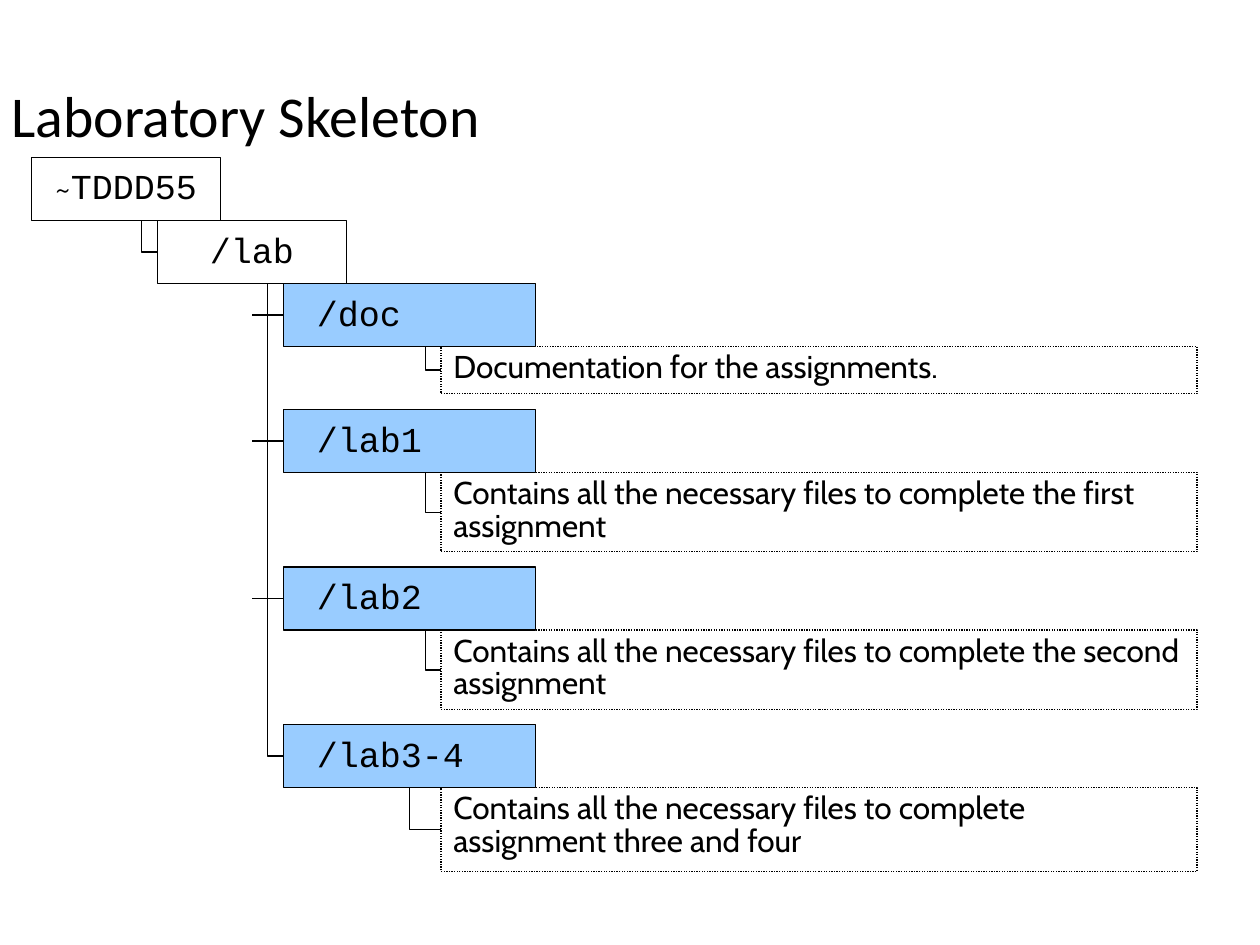
from lxml import etree
from pptx import Presentation
from pptx.dml.color import RGBColor
from pptx.enum.dml import MSO_LINE
from pptx.enum.shapes import MSO_CONNECTOR, MSO_SHAPE
from pptx.enum.text import MSO_ANCHOR, PP_ALIGN
from pptx.oxml.ns import qn
from pptx.util import Cm, Pt

RECTANGLE = MSO_SHAPE.RECTANGLE
ELBOW = MSO_CONNECTOR.ELBOW
DOTTED = MSO_LINE.ROUND_DOT
TOP, MIDDLE = MSO_ANCHOR.TOP, MSO_ANCHOR.MIDDLE
LEFT, CENTER = PP_ALIGN.LEFT, PP_ALIGN.CENTER
BLACK = RGBColor(0, 0, 0)
BLUE = RGBColor(0x99, 0xCC, 0xFF)
CODE, BODY, HEADING = "Courier New", "Cabin", "Calibri"

TITLE = "Laboratory Skeleton"
ROOTS = [
    (1, 5, [("~", BODY), ("TDDD55", CODE)], 0.86),
    (5, 7, [("/lab", CODE)], 0.9),
]
# top, name, description, description height, branch drop, elbow position
FOLDERS = [
    (9, " /doc", "Documentation for the assignments.", 1.5, 0.75, 0.5),
    (13, " /lab1", "Contains all the necessary files to complete the first assignment", 2.52, 1.27, 0.5),
    (18, " /lab2", "Contains all the necessary files to complete the second assignment", 2.52, 1.27, 0.5),
    (23, " /lab3-4", "Contains all the necessary files to complete assignment three and four", 2.67, 1.33, 0),
]
ROOT_WIDTH, FOLDER_WIDTH, NOTE_WIDTH, ROW = 6, 8, 24, 2
FOLDER_LEFT, NOTE_LEFT = 9, 14
LAST_TEXT_WIDTH = 23.32


def grid(quarter_inches):
    return Cm(2.54 * quarter_inches / 4)


def write(box, spans, size=18, spacing=0.86, align=LEFT, anchor=TOP, wrap=True):
    frame = box.text_frame
    frame.word_wrap = wrap
    frame.vertical_anchor = anchor
    para = frame.paragraphs[0]
    para.alignment = align
    para.line_spacing = spacing
    for text, font in spans:
        span = para.add_run()
        span.text = text
        span.font.name = font
        span.font.size = Pt(size)
        span.font.color.rgb = BLACK
    return frame


def add_box(page, left, top, width, height, fill=None, dash=None):
    box = page.shapes.add_shape(RECTANGLE, grid(left), grid(top), grid(width), grid(height))
    box.shadow.inherit = False
    if fill is None:
        box.fill.background()
    else:
        box.fill.solid()
        box.fill.fore_color.rgb = fill
    box.line.color.rgb = BLACK
    box.line.width = Pt(0.75)
    if dash is not None:
        box.line.dash_style = dash
    return box


def add_branch(page, start, end, bend=0.5):
    branch = page.shapes.add_connector(ELBOW, *(grid(value) for value in start + end))
    branch.line.color.rgb = BLACK
    branch.line.width = Pt(0.75)
    properties = branch._element.spPr
    etree.SubElement(properties, qn("a:effectLst"))
    guides = properties.find(qn("a:prstGeom")).find(qn("a:avLst"))
    etree.SubElement(guides, qn("a:gd"), name="adj1", fmla=f"val {int(bend * 100000)}")


def main():
    deck = Presentation()
    deck.slide_width, deck.slide_height = grid(40), grid(30)
    page = deck.slides.add_slide(deck.slide_layouts[6])

    heading = page.shapes.add_textbox(Cm(0.23), Cm(1.55), Cm(23.5), Cm(1.65))
    frame = write(heading, [(TITLE, HEADING)], size=33, spacing=0.96, anchor=MIDDLE)
    frame.margin_left = frame.margin_right = frame.margin_top = frame.margin_bottom = 0

    for left, top, spans, spacing in ROOTS:
        box = add_box(page, left, top, ROOT_WIDTH, ROW)
        write(box, spans, size=20, spacing=spacing, align=CENTER, anchor=MIDDLE, wrap=False)
    add_branch(page, (4, 7), (5, 8))

    trunk = (FOLDER_LEFT - 1, FOLDERS[0][0])
    for top, name, description, height, drop, bend in FOLDERS:
        middle, bottom = top + ROW / 2, top + ROW
        folder = add_box(page, FOLDER_LEFT, top, FOLDER_WIDTH, ROW, fill=BLUE)
        write(folder, [(name, CODE)], size=20, spacing=0.9, anchor=MIDDLE, wrap=False)
        add_branch(page, (FOLDER_LEFT, middle), trunk)
        trunk = (FOLDER_LEFT - 1, middle)

        note = add_box(page, NOTE_LEFT, bottom, NOTE_WIDTH, height, dash=DOTTED)
        if top == FOLDERS[-1][0]:
            note = page.shapes.add_textbox(
                grid(NOTE_LEFT), grid(bottom), grid(LAST_TEXT_WIDTH), grid(2.48))
        write(note, [(description, BODY)])
        add_branch(page, (NOTE_LEFT - 1, bottom), (NOTE_LEFT, bottom + drop), bend=bend)

    deck.save("out.pptx")


if __name__ == "__main__":
    main()
